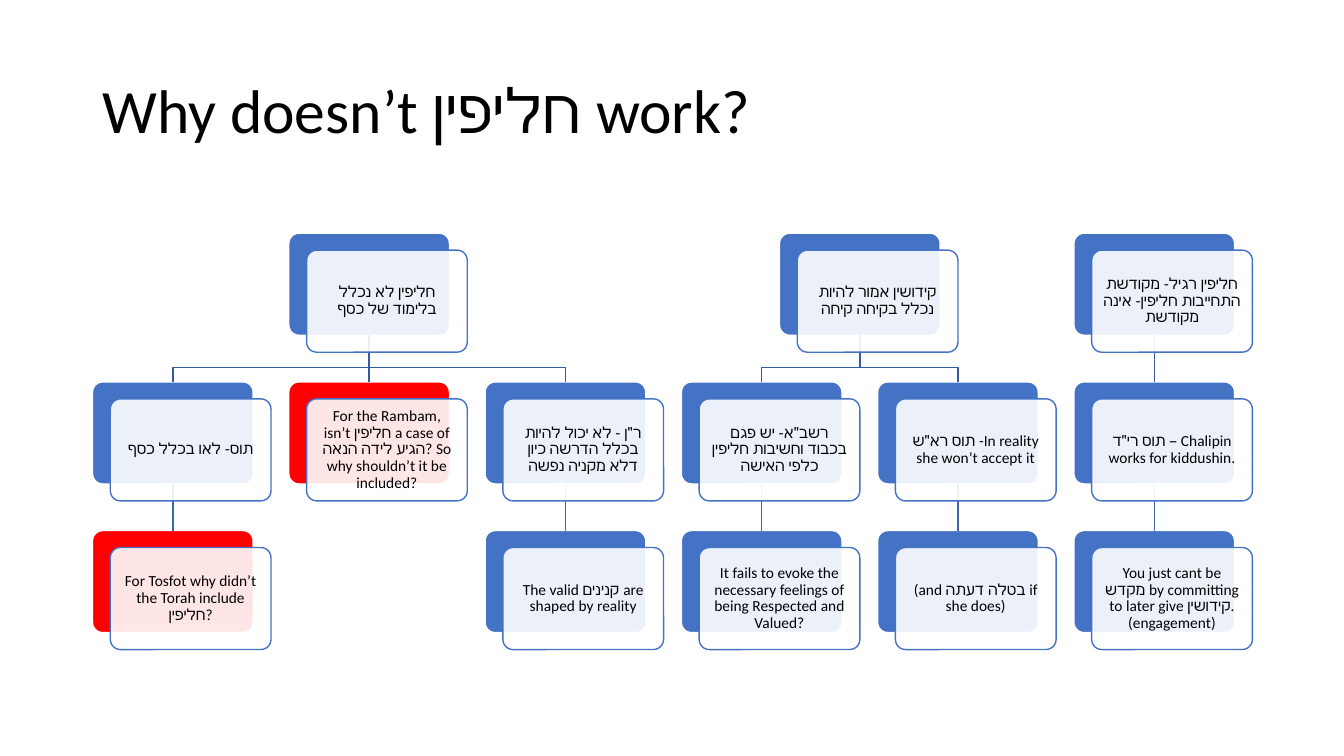
"""Build a slide with a three-level tree of two-layer cards."""
from dataclasses import dataclass
from typing import Optional

from lxml import etree
from pptx import Presentation
from pptx.dml.color import RGBColor
from pptx.enum.shapes import MSO_CONNECTOR, MSO_SHAPE
from pptx.enum.text import MSO_ANCHOR, MSO_AUTO_SIZE, PP_ALIGN
from pptx.oxml.ns import qn
from pptx.util import Pt

STRAIGHT = MSO_CONNECTOR.STRAIGHT
ROUNDED = MSO_SHAPE.ROUNDED_RECTANGLE
MIDDLE = MSO_ANCHOR.MIDDLE
NO_AUTOFIT = MSO_AUTO_SIZE.NONE
LEFT, CENTER = PP_ALIGN.LEFT, PP_ALIGN.CENTER
TOP_SITE, BOTTOM_SITE = 0, 2

TREE_LEFT, TREE_TOP = 66.1, 166.6
COL_STEP, ROW_STEP = 140.2, 106.2
CARD_W, CARD_H = 114.8, 72.9
PANEL_DX, PANEL_DY = 12.7, 12.1
BEND_DROP = 22.9
PANEL_INSET = 5.8


@dataclass(frozen=True)
class Theme:
    """Colours and type sizes of the slide."""
    font: str = "Calibri"
    title_size: float = 44
    card_size: float = 11
    line_width: float = 1
    line_spacing: float = 0.9
    panel_opacity: int = 90
    text: RGBColor = RGBColor(0x00, 0x00, 0x00)
    white: RGBColor = RGBColor(0xFF, 0xFF, 0xFF)
    blue: RGBColor = RGBColor(0x44, 0x72, 0xC4)
    red: RGBColor = RGBColor(0xFF, 0x00, 0x00)
    links: tuple = (RGBColor(0x36, 0x5B, 0x9D), RGBColor(0x3E, 0x67, 0xB2))


@dataclass(frozen=True)
class Card:
    """One card of the tree, placed by column and row."""
    col: float
    row: int
    text: str
    parent_col: Optional[float] = None
    is_question: bool = False

    @property
    def left(self) -> float:
        """Left edge in points."""
        return TREE_LEFT + self.col * COL_STEP

    @property
    def top(self) -> float:
        """Top edge in points."""
        return TREE_TOP + self.row * ROW_STEP


THEME = Theme()
CARDS = [
    Card(1, 0, "חליפין לא נכלל בלימוד של כסף"),
    Card(0, 1, "תוס- לאו בכלל כסף", 1),
    Card(0, 2, "For Tosfot why didn’t the Torah include חליפין?", 0, True),
    Card(1, 1, "For the Rambam, isn’t חליפין a case of הגיע לידה הנאה? "
         "So why shouldn’t it be included?", 1, True),
    Card(2, 1, 'ר"ן - לא יכול להיות בכלל הדרשה כיון דלא מקניה נפשה', 1),
    Card(2, 2, "The valid קנינים are shaped by reality", 2),
    Card(3.5, 0, "קידושין אמור להיות נכלל בקיחה קיחה"),
    Card(3, 1, 'רשב"א- יש פגם בכבוד וחשיבות חליפין כלפי האישה', 3.5),
    Card(3, 2, "It fails to evoke the necessary feelings of being "
         "Respected and Valued?", 3),
    Card(4, 1, 'תוס רא"ש -In reality she won’t accept it', 3.5),
    Card(4, 2, "(and בטלה דעתה if she does)", 4),
    Card(5, 0, "חליפין רגיל- מקודשת\nהתחייבות חליפין- אינה מקודשת"),
    Card(5, 1, 'תוס רי"ד – Chalipin works for kiddushin.', 5),
    Card(5, 2, "You just cant be מקדש by committing to later give קידושין. "
         "(engagement)", 5),
]


def write_text(tf, text: str, size: float, align) -> None:
    """Fill a text frame and format its runs."""
    tf.text = text
    tf.word_wrap = True
    tf.auto_size = NO_AUTOFIT
    tf.vertical_anchor = MIDDLE
    for p in tf.paragraphs:
        p.alignment = align
        p.line_spacing = THEME.line_spacing
        for r in p.runs:
            r.font.name = THEME.font
            r.font.size = Pt(size)
            r.font.color.rgb = THEME.text


def add_box(s, left: float, top: float, fill: RGBColor, line: RGBColor):
    """Add one rounded layer of a card."""
    sp = s.shapes.add_shape(ROUNDED, Pt(left), Pt(top), Pt(CARD_W), Pt(CARD_H))
    sp.adjustments[0] = 0.1
    sp.shadow.inherit = False
    sp.fill.solid()
    sp.fill.fore_color.rgb = fill
    sp.line.color.rgb = line
    sp.line.width = Pt(THEME.line_width)
    return sp


def add_back(s, card: Card):
    """Add the coloured back layer of a card."""
    fill = THEME.red if card.is_question else THEME.blue
    return add_box(s, card.left, card.top, fill, THEME.white)


def add_panel(s, card: Card) -> None:
    """Add the translucent front layer with the card's text."""
    sp = add_box(s, card.left + PANEL_DX, card.top + PANEL_DY,
                 THEME.white, THEME.blue)
    color = sp.fill._xPr.find(qn("a:solidFill"))[0]
    alpha = etree.SubElement(color, qn("a:alpha"))
    alpha.set("val", str(THEME.panel_opacity * 1000))
    tf = sp.text_frame
    tf.margin_left = tf.margin_right = Pt(PANEL_INSET)
    tf.margin_top = tf.margin_bottom = Pt(PANEL_INSET)
    write_text(tf, card.text, THEME.card_size, CENTER)


def add_straight_link(s, parent, child):
    """Join a card to the one right above it."""
    sp = s.shapes.add_connector(STRAIGHT, 0, 0, 0, 0)
    sp.begin_connect(parent, BOTTOM_SITE)
    sp.end_connect(child, TOP_SITE)
    etree.SubElement(sp._element.spPr, qn("a:effectLst"))
    return sp


def add_bent_link(s, parent, child):
    """Join a card to a parent in another column."""
    start_x, end_x = (b.left + b.width // 2 for b in (parent, child))
    start_y = parent.top + parent.height
    bend_y = start_y + Pt(BEND_DROP)
    builder = s.shapes.build_freeform(start_x, start_y)
    builder.add_line_segments(
        [(start_x, bend_y), (end_x, bend_y), (end_x, child.top)], close=False)
    sp = builder.convert_to_shape()
    sp.fill.background()
    sp.shadow.inherit = False
    return sp


def add_link(s, card: Card, backs: dict) -> None:
    """Draw the line from a card's parent to the card."""
    parent = backs[card.parent_col, card.row - 1]
    child = backs[card.col, card.row]
    draw = add_straight_link if card.col == card.parent_col else add_bent_link
    sp = draw(s, parent, child)
    sp.line.color.rgb = THEME.links[card.row - 1]
    sp.line.width = Pt(THEME.line_width)


def main() -> None:
    """Build and save the slide."""
    prs = Presentation()
    prs.slide_width, prs.slide_height = Pt(960), Pt(540)
    s = prs.slides.add_slide(prs.slide_layouts.get_by_name("Title Only"))
    title = s.shapes.title
    title.left, title.top = Pt(66), Pt(28.75)
    title.width, title.height = Pt(828), Pt(104.4)
    write_text(title.text_frame, "Why doesn’t חליפין work?",
               THEME.title_size, LEFT)

    backs = {(card.col, card.row): add_back(s, card) for card in CARDS}
    for card in CARDS:
        if card.parent_col is not None:
            add_link(s, card, backs)
    for card in CARDS:
        add_panel(s, card)
    prs.save("out.pptx")


if __name__ == "__main__":
    main()
